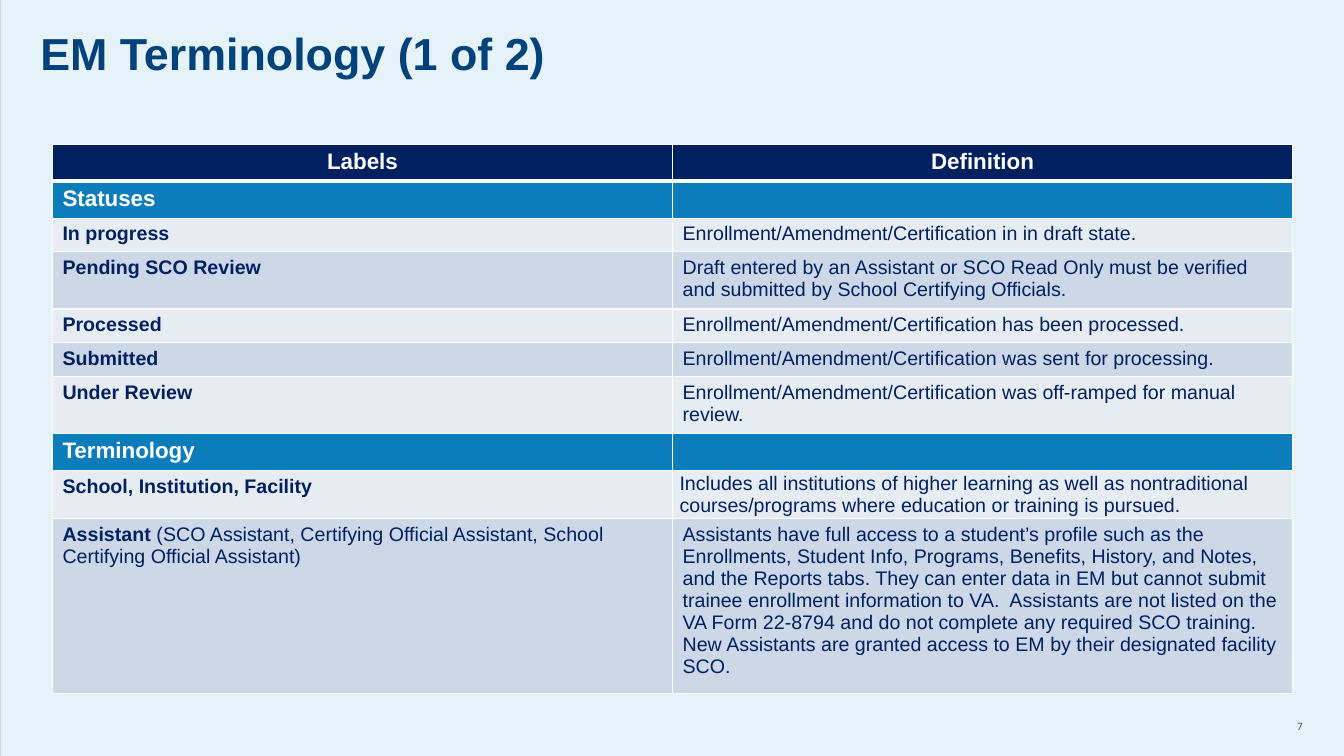
from dataclasses import dataclass

from lxml import etree
from pptx import Presentation
from pptx import util as u
from pptx.dml.color import RGBColor
from pptx.enum import shapes, text
from pptx.oxml import ns

COLORS = {
    "edge": "C7D7EB", "background": "E5F2F7", "title": "004279", "number": "4D525C",
    "navy": "002060", "section": "0C7CBB", "light": "E7ECF3", "band": "CCD7E7",
    "white": "FFFFFF",
}
COLUMN_WIDTH = 6.15


@dataclass
class Row:
    label: str
    definition: str
    height: float
    fill: str
    detail: str = ""
    tight: bool = False

    @property
    def is_heading(self) -> bool:
        return self.fill in ("navy", "section")


ROWS = [
    Row("Labels", "Definition", 0.35, "navy"),
    Row("Statuses", "", 0.35, "section"),
    Row("In progress", "Enrollment/Amendment/Certification in in draft state.", 0.32, "light"),
    Row("Pending SCO Review",
        "Draft entered by an Assistant or SCO Read Only must be verified and submitted "
        "by School Certifying Officials.", 0.54, "band"),
    Row("Processed", "Enrollment/Amendment/Certification has been processed.", 0.32, "light"),
    Row("Submitted", "Enrollment/Amendment/Certification was sent for processing.", 0.32, "band"),
    Row("Under Review",
        "Enrollment/Amendment/Certification was off-ramped for manual review.", 0.54, "light"),
    Row("Terminology", "", 0.35, "section"),
    Row("School, Institution, Facility",
        "Includes all institutions of higher learning as well as nontraditional "
        "courses/programs where education or training is pursued.", 0.45, "light", tight=True),
    Row("Assistant",
        "Assistants have full access to a student’s profile such as the Enrollments, "
        "Student Info, Programs, Benefits, History, and Notes, and the Reports tabs. "
        "They can enter data in EM but cannot submit trainee enrollment information to VA.  "
        "Assistants are not listed on the VA Form 22-8794 and do not complete any required "
        "SCO training. New Assistants are granted access to EM by their designated "
        "facility SCO.", 1.63, "band",
        detail=" (SCO Assistant, Certifying Official Assistant, "
               "School Certifying Official Assistant)"),
]


def color(name: str) -> RGBColor:
    return RGBColor.from_string(COLORS[name])


def add_text(paragraph, content: str, *, size: float, fill: str, bold: bool = False,
             font: str = "Arial", align=text.PP_ALIGN.LEFT) -> None:
    """Append a formatted run; empty content only fixes the line's size."""
    paragraph.alignment = align
    if not content:
        paragraph._p.get_or_add_endParaRPr().set("sz", str(size * 100))
        return
    run = paragraph.add_run()
    run.text = content
    run.font.name, run.font.size, run.font.bold = font, u.Pt(size), bold
    run.font.color.rgb = color(fill)


def add_text_box(slide, left: float, top: float, width: float, height: float, inset: float = 0):
    """Return the first paragraph of a text box with no side insets."""
    shape = slide.shapes.add_textbox(*map(u.Inches, (left, top, width, height)))
    frame = shape.text_frame
    frame.word_wrap = True
    frame.margin_left = frame.margin_right = 0
    frame.margin_top = frame.margin_bottom = u.Inches(inset)
    return frame.paragraphs[0]


def set_borders(cell, top: float, bottom: float) -> None:
    """Draw white borders; top and bottom widths are in points."""
    properties = cell._tc.get_or_add_tcPr()
    for position, (side, width) in enumerate(
            {"lnL": 1, "lnR": 1, "lnT": top, "lnB": bottom}.items()):
        line = etree.Element(ns.qn(f"a:{side}"), w=str(u.Pt(width)))
        solid = etree.SubElement(line, ns.qn("a:solidFill"))
        etree.SubElement(solid, ns.qn("a:srgbClr"), val=COLORS["white"])
        properties.insert(position, line)


def fill_cell(cell, row: Row, is_label: bool) -> None:
    cell.fill.solid()
    cell.fill.fore_color.rgb = color(row.fill)
    paragraph = cell.text_frame.paragraphs[0]
    size = 16 if row.is_heading else 14
    fill = "white" if row.is_heading else "navy"
    align = text.PP_ALIGN.CENTER if row.fill == "navy" else text.PP_ALIGN.LEFT
    add_text(paragraph, row.label if is_label else row.definition, size=size, fill=fill,
             bold=is_label or row.is_heading, align=align)
    if is_label and row.detail:
        add_text(paragraph, row.detail, size=size, fill=fill)
    if row.tight and not is_label:
        cell.vertical_anchor = text.MSO_ANCHOR.MIDDLE
        cell.margin_left = cell.margin_right = u.Inches(0.07)
        cell.margin_top, cell.margin_bottom = u.Inches(0.01), 0


def add_terminology_table(slide) -> None:
    frame = slide.shapes.add_table(
        len(ROWS), 2, u.Inches(0.52), u.Inches(1.43), u.Inches(2 * COLUMN_WIDTH),
        u.Inches(sum(row.height for row in ROWS)))
    table = frame.table
    table.horz_banding = False
    for column in table.columns:
        column.width = u.Inches(COLUMN_WIDTH)
    for index, row in enumerate(ROWS):
        table.rows[index].height = u.Inches(row.height)
        for column_index in range(2):
            cell = table.cell(index, column_index)
            fill_cell(cell, row, is_label=column_index == 0)
            set_borders(cell, top=3 if index == 1 else 1, bottom=3 if index == 0 else 1)


def main() -> None:
    presentation = Presentation()
    presentation.slide_width, presentation.slide_height = u.Inches(13.33), u.Inches(7.5)
    slide = presentation.slides.add_slide(presentation.slide_layouts[6])
    slide.background.fill.solid()
    slide.background.fill.fore_color.rgb = color("edge")

    panel = slide.shapes.add_shape(shapes.MSO_SHAPE.RECTANGLE, u.Inches(0.01), 0,
                                   u.Inches(13.32), u.Inches(7.5))
    panel.shadow.inherit = False
    panel.fill.solid()
    panel.fill.fore_color.rgb = color("background")
    panel.line.fill.background()

    number = add_text_box(slide, 12.5, 7.09, 0.42, 0.23, inset=0.05)
    add_text(number, "7", size=8, fill="number", font="Calibri", align=text.PP_ALIGN.RIGHT)

    title = add_text_box(slide, 0.4, 0.31, 12.5, 0.63, inset=0.05)
    title.line_spacing = 0.8
    add_text(title, "EM Terminology (1 of 2)", size=32, fill="title", bold=True)

    add_terminology_table(slide)
    presentation.save("out.pptx")


if __name__ == "__main__":
    main()
